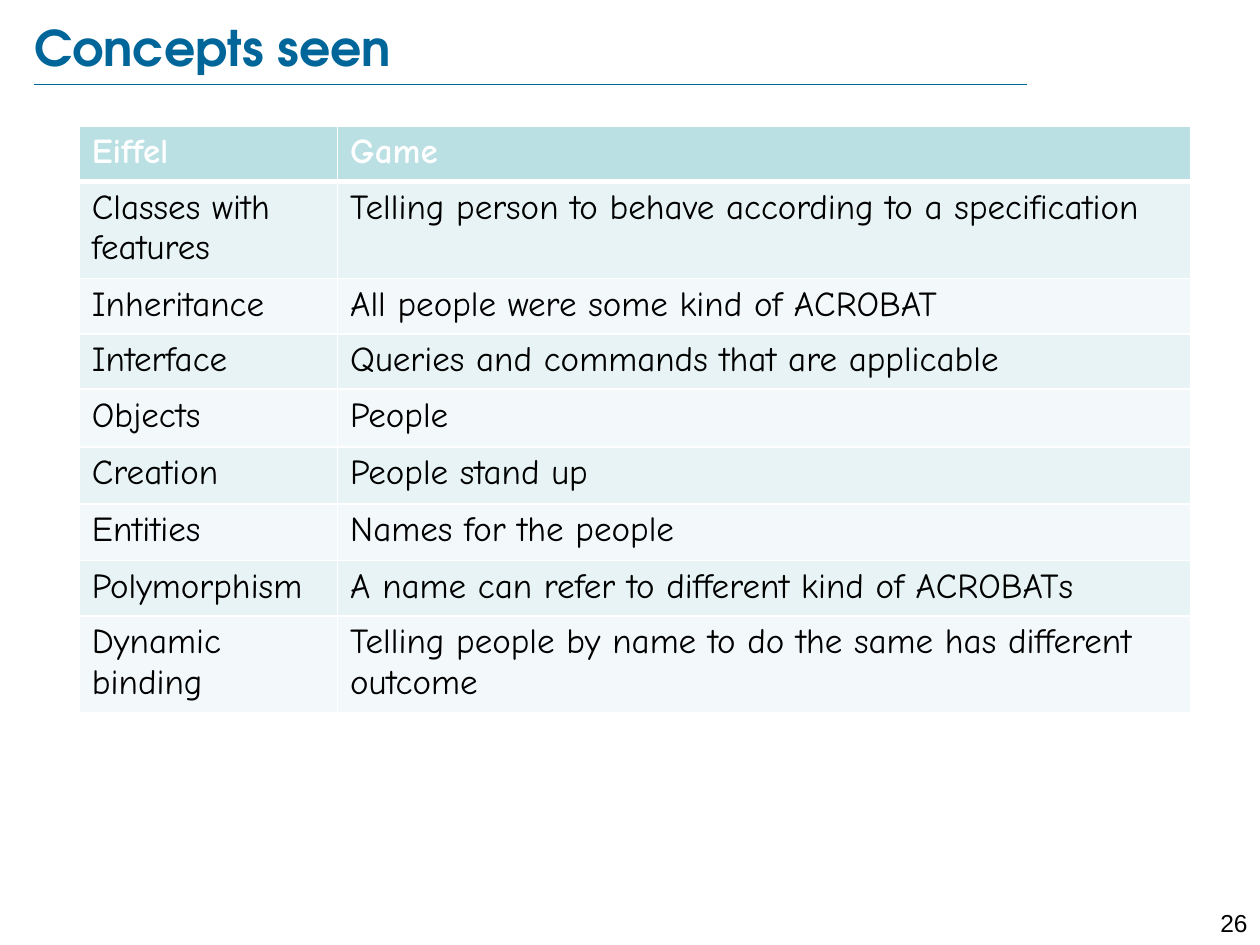
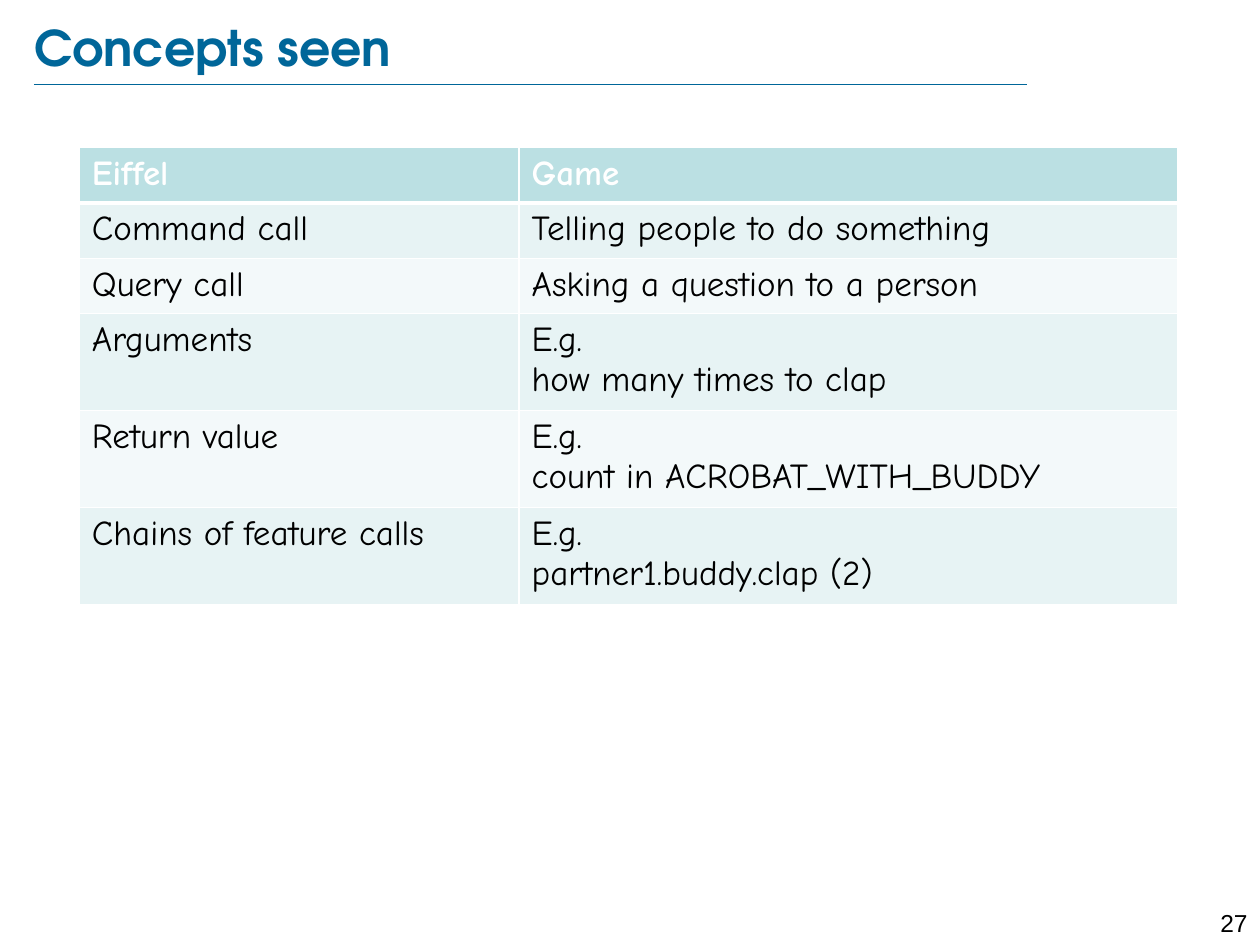
import dataclasses

import lxml.etree
import pptx
import pptx.dml.color
import pptx.enum.shapes
import pptx.enum.text
import pptx.oxml.ns
import pptx.util


@dataclasses.dataclass(frozen=True)
class Theme:
    title_color: str = "006699"
    text_color: str = "000000"
    white: str = "FFFFFF"
    header_fill: str = "BBE0E3"
    band_fills: tuple = ("E7F3F4", "F3F9FA")
    title_font: str = "TeX Gyre Adventor"
    body_font: str = "Comic Neue"
    number_font: str = "Arial"
    title_size: int = 28
    body_size: int = 20
    number_size: int = 14
    rule_width: float = 0.25
    border_width: int = 1
    header_border_width: int = 3


THEME = Theme()
WIDTH, HEIGHT = 10, 7.5
TITLE_LEFT = 0.27
TABLE_LEFT = 0.63
SHORT_ROW, TALL_ROW = 0.44, 0.77

LANGUAGE_CONCEPTS = [
    ("Eiffel", "Game"),
    ("Classes with features", "Telling person to behave according to a specification"),
    ("Inheritance", "All people were some kind of ACROBAT"),
    ("Interface", "Queries and commands that are applicable"),
    ("Objects", "People"),
    ("Creation", "People stand up"),
    ("Entities", "Names for the people"),
    ("Polymorphism", "A name can refer to different kind of ACROBATs"),
    ("Dynamic binding", "Telling people by name to do the same has different outcome"),
]
LANGUAGE_ROWS = [SHORT_ROW, TALL_ROW, SHORT_ROW, SHORT_ROW, 0.46, 0.45, 0.45, SHORT_ROW, TALL_ROW]

CALL_CONCEPTS = [
    ("Eiffel", "Game"),
    ("Command call", "Telling people to do something"),
    ("Query call", "Asking a question to a person"),
    ("Arguments", "E.g.\vhow many times to clap"),
    ("Return value", "E.g.\vcount in ACROBAT_WITH_BUDDY"),
    ("Chains of feature calls", "E.g.\vpartner1.buddy.clap (2)"),
]
CALL_ROWS = [SHORT_ROW] * 3 + [TALL_ROW] * 3


def inches(*lengths):
    return [pptx.util.Inches(length) for length in lengths]


def rgb(color):
    return pptx.dml.color.RGBColor.from_string(color)


def style_text(text_frame, font_name, size, color, bold=False):
    for paragraph in text_frame.paragraphs:
        paragraph.font.name = font_name
        paragraph.font.size = pptx.util.Pt(size)
        paragraph.font.bold = bold
        paragraph.font.color.rgb = rgb(color)


def add_title(slide, title):
    box = slide.shapes.add_textbox(*inches(TITLE_LEFT, 0.13, 8.69, 0.48))
    frame = box.text_frame
    frame.word_wrap = True
    frame.margin_left = frame.margin_right = frame.margin_top = frame.margin_bottom = 0
    frame.vertical_anchor = pptx.enum.text.MSO_ANCHOR.MIDDLE
    frame.text = title
    style_text(frame, THEME.title_font, THEME.title_size, THEME.title_color, bold=True)


def add_title_rule(slide):
    rule = slide.shapes.add_connector(
        pptx.enum.shapes.MSO_CONNECTOR.STRAIGHT, *inches(TITLE_LEFT, 0.67, 8.15, 0.67))
    rule.line.color.rgb = rgb(THEME.title_color)
    rule.line.width = pptx.util.Pt(THEME.rule_width)
    lxml.etree.SubElement(rule._element.spPr, pptx.oxml.ns.qn("a:effectLst"))


def add_page_number(slide, number):
    width, height = 0.55, 0.24
    box = slide.shapes.add_textbox(*inches(WIDTH - width, 7.16, width, height))
    frame = box.text_frame
    frame.word_wrap = True
    frame.text = str(number)
    frame.paragraphs[0].alignment = pptx.enum.text.PP_ALIGN.RIGHT
    style_text(frame, THEME.number_font, THEME.number_size, THEME.text_color)


def set_borders(cell, top, bottom):
    """Draw white cell borders; top and bottom are widths in points."""
    properties = cell._tc.get_or_add_tcPr()
    widths = {"lnL": THEME.border_width, "lnR": THEME.border_width, "lnT": top, "lnB": bottom}
    for side, width in widths.items():
        line = lxml.etree.SubElement(
            properties, pptx.oxml.ns.qn(f"a:{side}"), w=str(pptx.util.Pt(width)))
        fill = lxml.etree.SubElement(line, pptx.oxml.ns.qn("a:solidFill"))
        lxml.etree.SubElement(fill, pptx.oxml.ns.qn("a:srgbClr"), val=THEME.white)


def fill_cell(cell, text, row):
    is_header = row == 0
    set_borders(
        cell,
        top=THEME.header_border_width if row == 1 else THEME.border_width,
        bottom=THEME.header_border_width if is_header else THEME.border_width)
    cell.fill.solid()
    cell.fill.fore_color.rgb = rgb(
        THEME.header_fill if is_header else THEME.band_fills[(row - 1) % 2])
    cell.text = text
    style_text(cell.text_frame, THEME.body_font, THEME.body_size,
               THEME.white if is_header else THEME.text_color, bold=is_header)


def add_concept_table(slide, concepts, top, column_widths, row_heights):
    frame = slide.shapes.add_table(
        len(concepts), len(column_widths),
        *inches(TABLE_LEFT, top, sum(column_widths), sum(row_heights)))
    table = frame.table
    table.horz_banding = False
    for column, width in zip(table.columns, inches(*column_widths)):
        column.width = width
    for row, height in zip(table.rows, inches(*row_heights)):
        row.height = height
    for row, texts in enumerate(concepts):
        for column, text in enumerate(texts):
            fill_cell(table.cell(row, column), text, row)


def add_concept_slide(presentation, number, concepts, top, column_widths, row_heights):
    slide = presentation.slides.add_slide(presentation.slide_layouts[6])
    add_title_rule(slide)
    add_page_number(slide, number)
    add_title(slide, "Concepts seen")
    add_concept_table(slide, concepts, top, column_widths, row_heights)


def main():
    presentation = pptx.Presentation()
    presentation.slide_width, presentation.slide_height = inches(WIDTH, HEIGHT)
    add_concept_slide(presentation, 26, LANGUAGE_CONCEPTS, 1, (2.05, 6.77), LANGUAGE_ROWS)
    add_concept_slide(presentation, 27, CALL_CONCEPTS, 1.17, (3.49, 5.23), CALL_ROWS)
    presentation.save("out.pptx")


if __name__ == "__main__":
    main()
